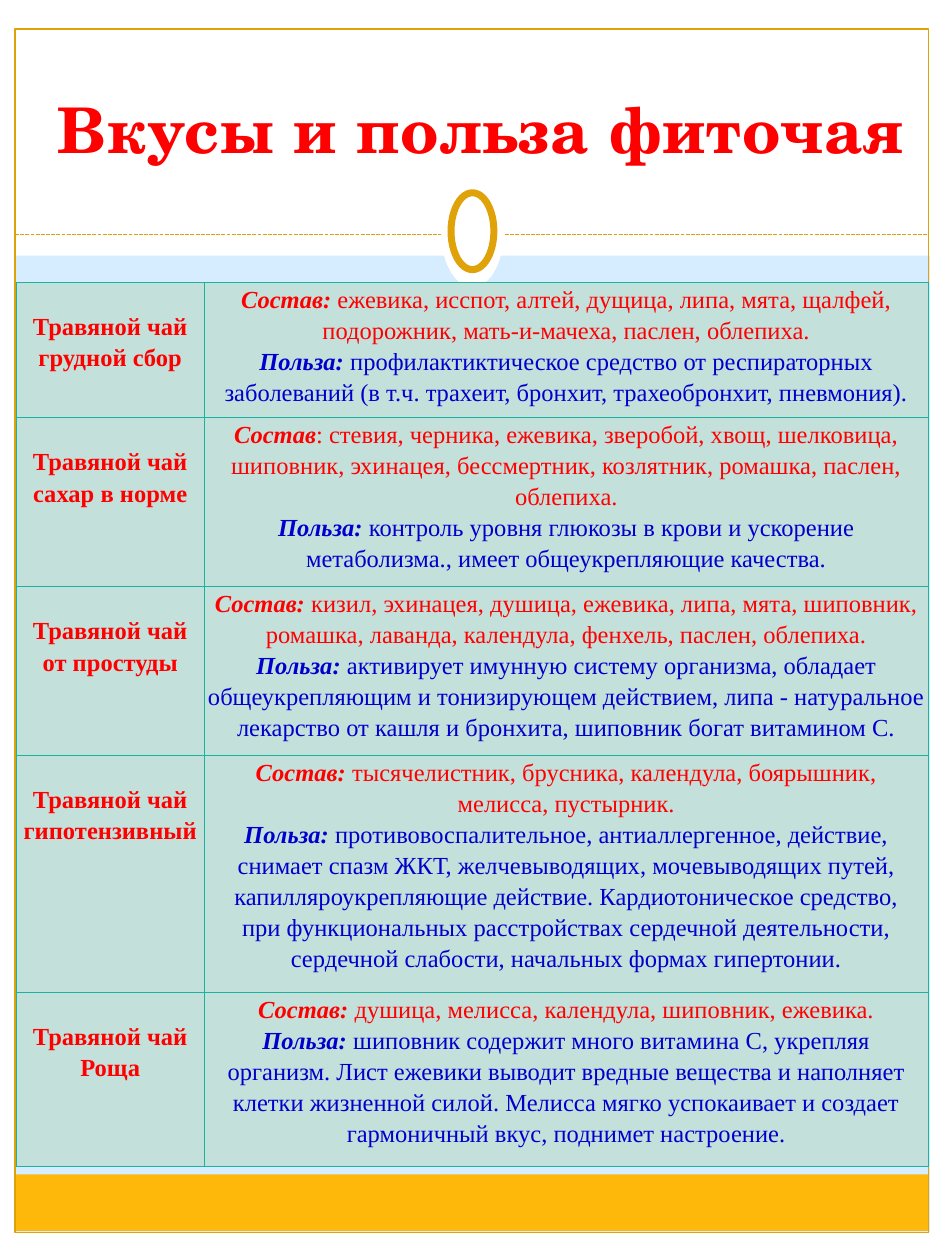
"""Build the herbal tea flavours and benefits slide."""
import pptx
import pptx.dml.color
import pptx.enum.dml
import pptx.enum.shapes
import pptx.enum.text
import pptx.oxml
import pptx.oxml.ns
import pptx.util
from pptx.util import Inches

COLOURS = {
    "sky": "D6ECFF", "white": "FFFFFF", "amber": "FEB80A", "gold": "E0A209",
    "red": "FF0000", "blue": "0000CC", "mint": "C4E0DB", "teal": "1AB39F",
}
SHAPES = pptx.enum.shapes.MSO_SHAPE
TEXT_FONT = "Times New Roman"
COLUMNS = [1.49, 5.75]
ROWS = [1.07, 1.34, 1.34, 1.88, 1.38]
TEA_NAME = "Травяной чай"
TEAS = [
    ("грудной сбор", "Состав:",
     " ежевика, исспот, алтей, дущица, липа, мята, щалфей, подорожник, "
     "мать-и-мачеха, паслен, облепиха.",
     ["профилактиктическое средство от респираторных заболеваний (в т.ч. трахеит, "
      "бронхит, трахеобронхит, пневмония)."]),
    ("сахар в норме", "Состав",
     ": стевия, черника, ежевика, зверобой, хвощ, шелковица, шиповник, эхинацея, "
     "бессмертник, козлятник, ромашка, паслен, облепиха.",
     ["контроль уровня глюкозы в крови и ускорение метаболизма., имеет "
      "общеукрепляющие качества."]),
    ("от простуды", "Состав:",
     " кизил, эхинацея, душица, ежевика, липа, мята, шиповник, ромашка, лаванда, "
     "календула, фенхель, паслен, облепиха.",
     ["активирует имунную систему организма, обладает общеукрепляющим и "
      "тонизирующем действием, липа - натуральное лекарство от кашля и бронхита, "
      "шиповник богат витамином С."]),
    ("гипотензивный", "Состав:",
     " тысячелистник, брусника, календула, боярышник,\nмелисса, пустырник.",
     ["противовоспалительное, антиаллергенное, действие, снимает спазм ЖКТ, "
      "желчевыводящих, мочевыводящих путей, капилляроукрепляющие действие. "
      "Кардиотоническое средство,",
      "при функциональных расстройствах сердечной деятельности, сердечной слабости, "
      "начальных формах гипертонии."]),
    ("Роща", "Состав:",
     " душица, мелисса, календула, шиповник, ежевика.",
     ["шиповник содержит много витамина С, укрепляя\nорганизм. Лист ежевики выводит "
      "вредные вещества и наполняет клетки жизненной силой. Мелисса мягко "
      "успокаивает и создает гармоничный вкус, поднимет настроение."]),
]


def rgb(name):
    return pptx.dml.color.RGBColor.from_string(COLOURS[name])


def add_text(para, text, size=14, font=TEXT_FONT, colour="red", bold=False,
             italic=False, spacing=None):
    for index, line in enumerate(text.split("\n")):
        if index:
            para.add_line_break()
        span = para.add_run()
        span.text = line
        span.font.size = pptx.util.Pt(size)
        span.font.name = font
        span.font.bold = bold
        span.font.italic = italic
        span.font.color.rgb = rgb(colour)
        if spacing:
            span._r.get_or_add_rPr().set("spc", str(round(spacing * 100)))


class TeaSlide:
    def __init__(self, page):
        self.page = page
        page.background.fill.solid()
        page.background.fill.fore_color.rgb = rgb("sky")

    def shape(self, kind, left, top, width, height, fill=None, line=None, weight=0.75):
        shape = self.page.shapes.add_shape(
            kind, Inches(left), Inches(top), Inches(width), Inches(height))
        shape.shadow.inherit = False
        if fill:
            shape.fill.solid()
            shape.fill.fore_color.rgb = rgb(fill)
        else:
            shape.fill.background()
        if line:
            shape.line.color.rgb = rgb(line)
            shape.line.width = pptx.util.Pt(weight)
        else:
            shape.line.fill.background()

    def dashed_rule(self, left, right, y):
        rule = self.page.shapes.add_connector(
            pptx.enum.shapes.MSO_CONNECTOR.STRAIGHT,
            Inches(left), Inches(y), Inches(right), Inches(y))
        rule.line.color.rgb = rgb("gold")
        rule.line.width = pptx.util.Pt(0.75)
        rule.line.dash_style = pptx.enum.dml.MSO_LINE.SQUARE_DOT
        rule._element.spPr.append(pptx.oxml.parse_xml(
            f'<a:effectLst {pptx.oxml.ns.nsdecls("a")}/>'))

    def title(self, text, left, top, width, height):
        box = self.page.shapes.add_textbox(
            Inches(left), Inches(top), Inches(width), Inches(height))
        box.text_frame.word_wrap = False
        para = box.text_frame.paragraphs[0]
        para.alignment = pptx.enum.text.PP_ALIGN.CENTER
        add_text(para, text, size=36, font="TeX Gyre Schola", bold=True, spacing=0.5)

    def cell(self, cell, paragraphs, top=0):
        properties = cell._tc.get_or_add_tcPr()
        for side in "LRTB":
            properties.append(pptx.oxml.parse_xml(
                f'<a:ln{side} {pptx.oxml.ns.nsdecls("a")} w="9525"><a:solidFill>'
                f'<a:srgbClr val="{COLOURS["teal"]}"/></a:solidFill></a:ln{side}>'))
        cell.fill.solid()
        cell.fill.fore_color.rgb = rgb("mint")
        cell.margin_left = cell.margin_right = Inches(0.02)
        cell.margin_top, cell.margin_bottom = Inches(top), 0
        frame = cell.text_frame
        for index, spans in enumerate(paragraphs):
            para = frame.add_paragraph() if index else frame.paragraphs[0]
            para.alignment = pptx.enum.text.PP_ALIGN.CENTER
            para.line_spacing = 1.15
            for text, style in spans:
                add_text(para, text, **style)

    def tea_table(self, left, top):
        table = self.page.shapes.add_table(
            len(ROWS), len(COLUMNS), Inches(left), Inches(top),
            Inches(sum(COLUMNS)), Inches(sum(ROWS))).table
        table.first_row = table.horz_banding = False
        for column, width in zip(table.columns, COLUMNS):
            column.width = Inches(width)
        label = {"bold": True, "italic": True}
        blue = {"colour": "blue"}
        for row, height, tea in zip(table.rows, ROWS, TEAS):
            kind, heading, composition, benefits = tea
            row.height = Inches(height)
            name_cell, detail_cell = row.cells
            names = [[(name, {"bold": True})] for name in (TEA_NAME, kind)]
            self.cell(name_cell, names, top=0.22)
            details = [[(heading, label), (composition, {})]]
            details += [[(benefit, blue)] for benefit in benefits]
            details[1].insert(0, ("Польза: ", label | blue))
            self.cell(detail_cell, details)


def main():
    deck = pptx.Presentation()
    deck.slide_width, deck.slide_height = Inches(7.5), Inches(10)
    slide = TeaSlide(deck.slides.add_slide(deck.slide_layouts[6]))
    for edge in [(0, 9.78, 7.5, 0.22), (0, 0, 7.5, 2.03),
                 (0, 0, 0.12, 10), (7.38, 0, 0.12, 10)]:
        slide.shape(SHAPES.RECTANGLE, *edge, fill="white")
    slide.shape(SHAPES.RECTANGLE, 0.12, 9.32, 7.25, 0.45, fill="amber")
    slide.shape(SHAPES.RECTANGLE, 0.12, 0.23, 7.25, 9.55, line="gold")
    slide.dashed_rule(0.12, 7.37, 1.86)
    slide.shape(SHAPES.OVAL, 3.5, 1.39, 0.5, 0.89, fill="white")
    slide.shape(SHAPES.OVAL, 3.58, 1.53, 0.34, 0.61, fill="white", line="gold", weight=4)
    slide.title("Вкусы и польза фиточая", 0.29, 0.67, 7.06, 0.71)
    slide.tea_table(0.13, 2.24)
    deck.save("out.pptx")


if __name__ == "__main__":
    main()
